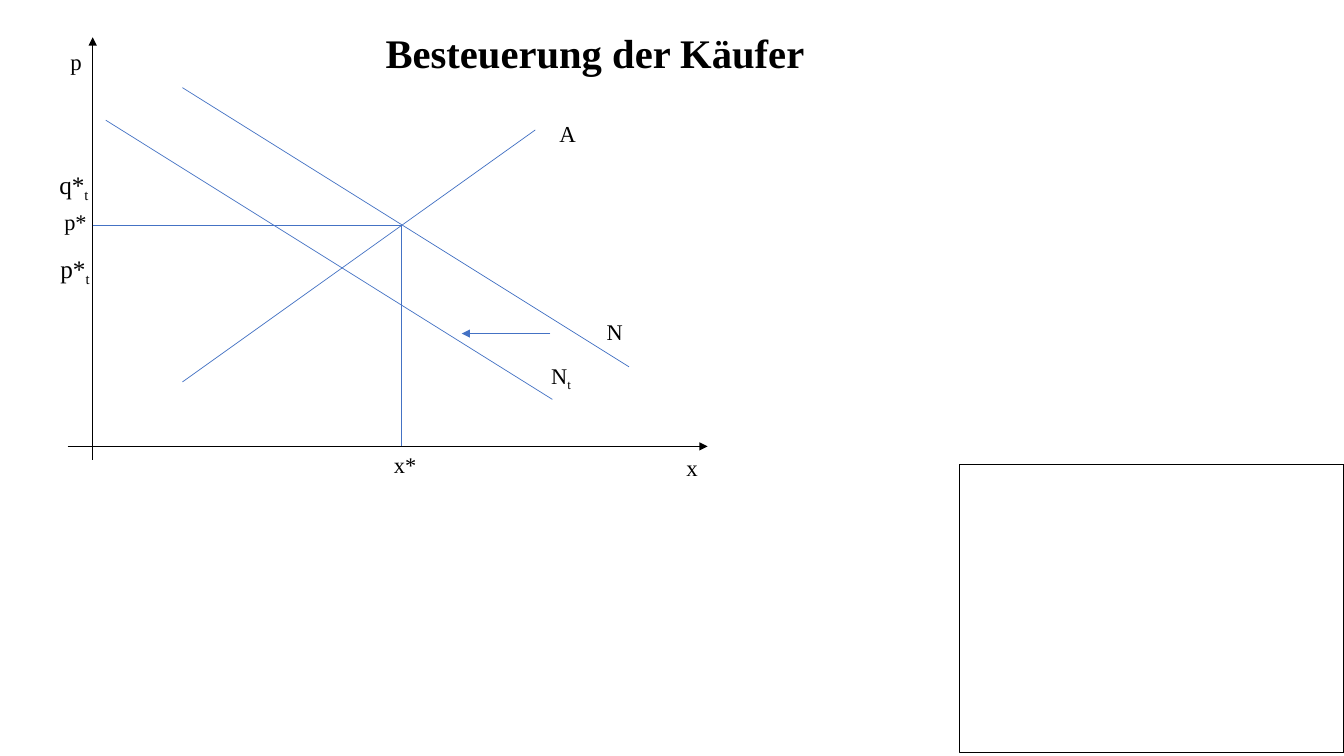
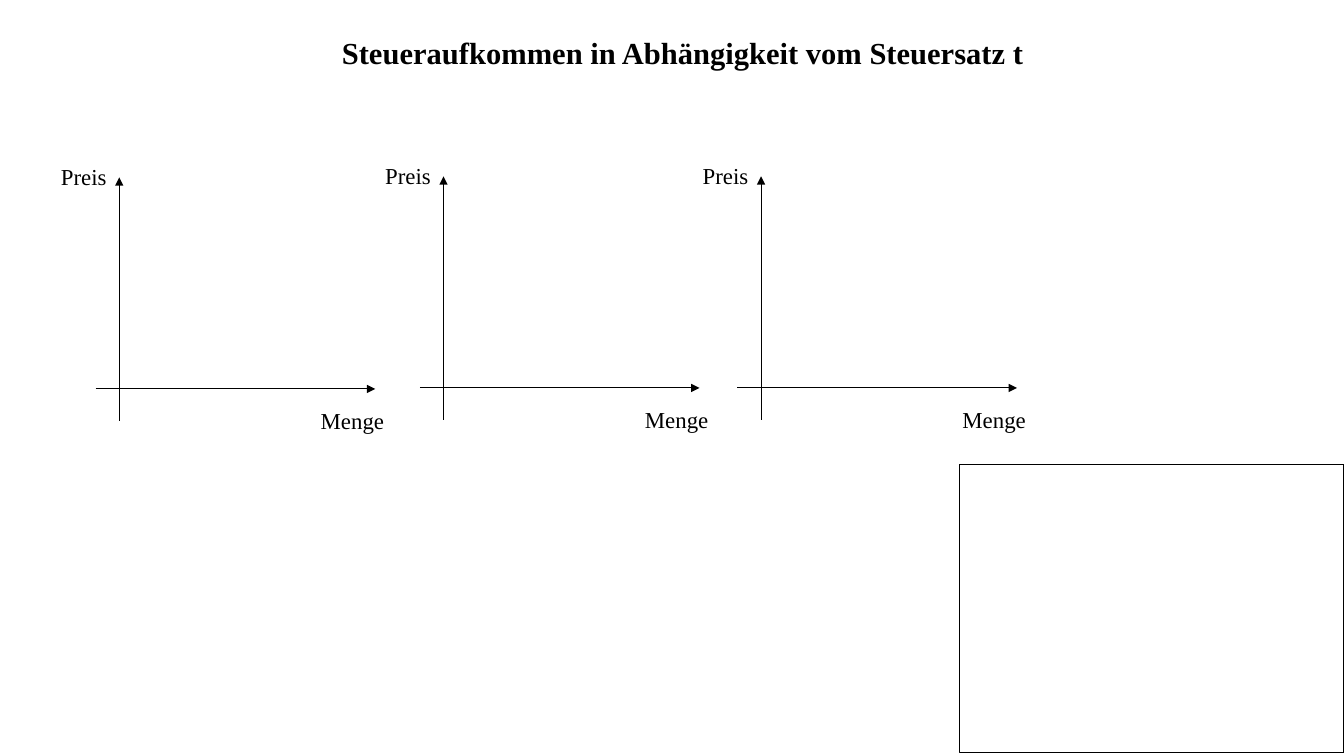
from dataclasses import dataclass

from lxml import etree
from pptx import Presentation
from pptx.dml.color import RGBColor
from pptx.enum.shapes import MSO_CONNECTOR, MSO_SHAPE
from pptx.enum.text import MSO_ANCHOR, MSO_AUTO_SIZE, PP_ALIGN
from pptx.oxml.ns import qn
from pptx.util import Inches, Pt

STRAIGHT = MSO_CONNECTOR.STRAIGHT
RECTANGLE = MSO_SHAPE.RECTANGLE
MIDDLE = MSO_ANCHOR.MIDDLE
CENTER = PP_ALIGN.CENTER
NO_FIT, GROW = MSO_AUTO_SIZE.NONE, MSO_AUTO_SIZE.SHAPE_TO_FIT_TEXT
TITLE_ONLY = 5

# Square grid: all positions are counted in columns and rows
WIDTH, HEIGHT = Inches(13.33), Inches(7.5)
COLUMNS = 40
CELL = WIDTH / COLUMNS


@dataclass(frozen=True)
class Theme:
    font: str = "Times New Roman"
    ink: RGBColor = RGBColor(0x00, 0x00, 0x00)
    curve: RGBColor = RGBColor(0x44, 0x72, 0xC4)
    title: float = 29
    long_title: float = 21.8
    axis_label: float = 16.3
    label: float = 16
    price_label: float = 18
    axis_line: float = 0.75
    curve_line: float = 0.5
    frame_line: float = 1


THEME = Theme()


def cells(*counts):
    return [round(count * CELL) for count in counts]


def add_span(para, text, size, bold=False, subscript=False):
    span = para.add_run()
    span.text = text
    span.font.name = THEME.font
    span.font.size = Pt(size)
    span.font.bold = bold
    span.font.color.rgb = THEME.ink
    if subscript:
        span.font._element.set("baseline", "-25000")


def add_page(deck, title, size, title_width):
    """Add a slide with its title and the empty frame at lower right."""
    page = deck.slides.add_slide(deck.slide_layouts[TITLE_ONLY])
    box = page.shapes.title
    box.left, box.top, box.width, box.height = cells(5.25, 0.33, title_width, 2.43)
    frame = box.text_frame
    frame.word_wrap = True
    frame.auto_size = NO_FIT
    frame.vertical_anchor = MIDDLE
    frame.margin_left = frame.margin_right = Inches(0.09)
    frame.margin_top = frame.margin_bottom = Inches(0.04)
    para = frame.paragraphs[0]
    para.alignment = CENTER
    add_span(para, title, size, bold=True)

    corner = page.shapes.add_shape(RECTANGLE, *cells(28.56, 13.83, 11.44, 8.58))
    corner.shadow.inherit = False
    corner.fill.background()
    corner.line.color.rgb = THEME.ink
    corner.line.width = Pt(THEME.frame_line)
    return page


def add_label(page, text, left, top, width, size=THEME.label, subscript=""):
    height = size * 0.07
    box = page.shapes.add_textbox(*cells(left, top, width, height))
    frame = box.text_frame
    frame.word_wrap = False
    frame.auto_size = GROW
    para = frame.paragraphs[0]
    add_span(para, text, size)
    if subscript:
        add_span(para, subscript, size, subscript=True)


def add_line(page, start, end, color=THEME.curve, width=THEME.curve_line, arrow=False):
    line = page.shapes.add_connector(STRAIGHT, *cells(*start, *end))
    line.line.color.rgb = color
    line.line.width = Pt(width)
    properties = line._element.spPr
    etree.SubElement(properties, qn("a:effectLst"))
    if arrow:
        outline = properties.find(qn("a:ln"))
        etree.SubElement(outline, qn("a:tailEnd"), type="triangle")


def add_axes(page, origin, left, right, up, down):
    """Draw both arrows; the four reaches are counted from the origin."""
    x, y = origin
    for start, end in (((x, y + down), (x, y - up)), ((x - left, y), (x + right, y))):
        add_line(page, start, end, THEME.ink, THEME.axis_line, arrow=True)


def build_buyer_tax(deck):
    page = add_page(deck, "Besteuerung der Käufer", THEME.title, 24.93)

    # Axes
    origin = (2.76, 13.29)
    add_axes(page, origin, left=0.75, right=18.3, up=12.18, down=0.39)
    add_label(page, "p", 1.8, 1.26, 0.96, THEME.axis_label)
    add_label(page, "x", 20.13, 13.35, 0.96, THEME.axis_label)

    # Supply, demand, and demand shifted by the tax
    demand = ((5.43, 2.61), (18.72, 10.92))
    taxed = [(x - 2.28, y + 0.97) for x, y in demand]
    add_line(page, (5.43, 11.37), (15.93, 3.87))
    add_line(page, *demand)
    add_line(page, *taxed)
    add_line(page, (16.38, 9.93), (13.74, 9.93), arrow=True)
    add_label(page, "A", 16.35, 3.42, 1.11, THEME.axis_label)
    add_label(page, "N", 17.76, 9.33, 1.11)
    add_label(page, "N", 16.11, 10.62, 1.23, subscript="t")

    # Guides from the equilibrium to the axes
    balance = (11.95, 6.7)
    add_line(page, (origin[0], balance[1]), balance)
    add_line(page, (balance[0], origin[1]), balance)
    add_label(page, "x*", 11.43, 13.29, 1.29)
    add_label(page, "p*", 1.62, 6.06, 1.29)
    add_label(page, "p*", 1.5, 7.38, 1.5, THEME.price_label, subscript="t")
    add_label(page, "q*", 1.47, 4.89, 1.5, THEME.price_label, subscript="t")


def build_tax_revenue(deck):
    page = add_page(deck, "Steueraufkommen in Abhängigkeit vom Steuersatz t",
                    THEME.long_title, 30.15)

    # Three empty price-quantity diagrams
    for x, y in ((3.55, 11.58), (13.2, 11.55), (22.65, 11.55)):
        add_axes(page, (x, y), left=0.7, right=7.62, up=6.3, down=0.95)
        add_label(page, "Preis", x - 2.03, y - 6.88, 1.98, THEME.axis_label)
        add_label(page, "Menge", x + 5.7, y + 0.39, 2.55, THEME.axis_label)


def main():
    deck = Presentation()
    deck.slide_width, deck.slide_height = WIDTH, HEIGHT
    build_buyer_tax(deck)
    build_tax_revenue(deck)
    deck.save("out.pptx")


if __name__ == "__main__":
    main()
